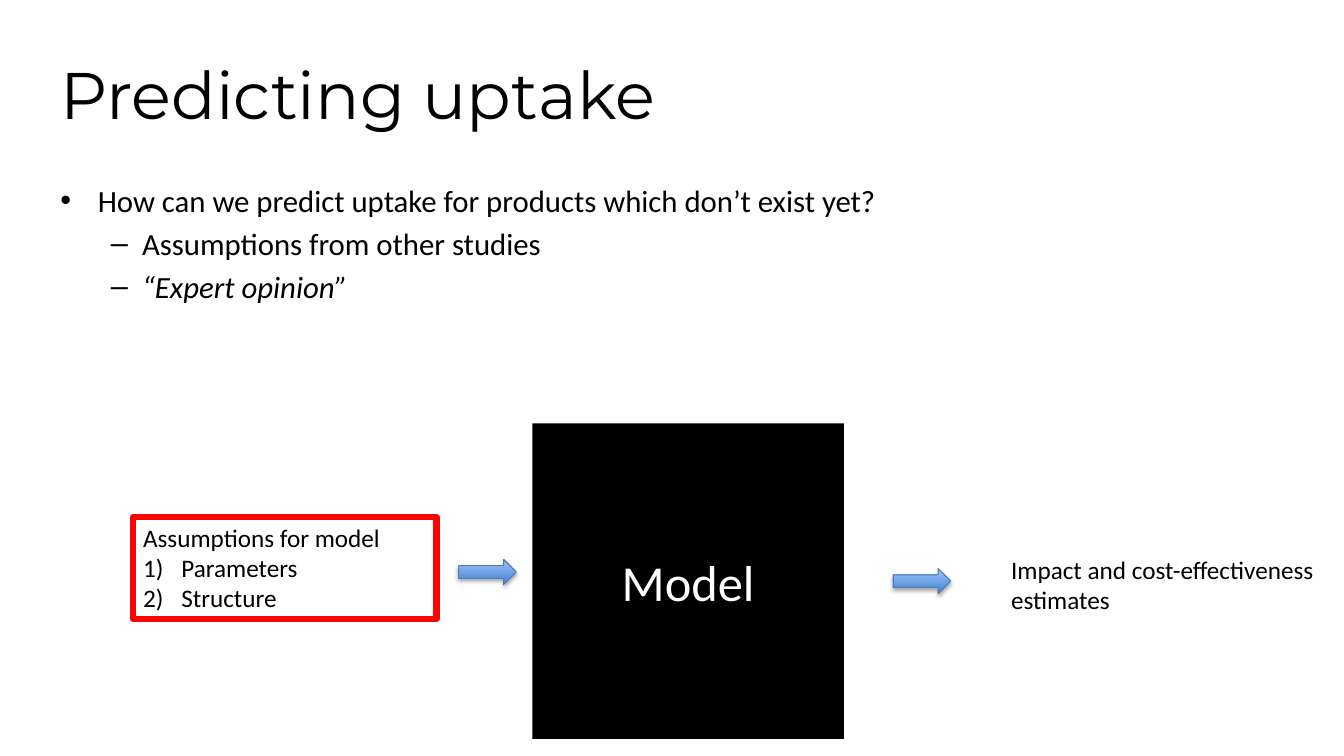
"""Build the slide on predicting uptake."""
from dataclasses import dataclass

from lxml import etree
from pptx import Presentation
from pptx.dml.color import RGBColor as Rgb
from pptx.enum.shapes import MSO_SHAPE as Shape
from pptx.enum.text import MSO_ANCHOR as Anchor, MSO_AUTO_SIZE as AutoSize, PP_ALIGN as Align
from pptx.oxml import parse_xml
from pptx.oxml.ns import nsdecls, qn
from pptx.util import Inches, Pt


@dataclass(frozen=True)
class Theme:
    """Fonts, colours and type sizes of the slide."""
    title_font: str = "Montserrat"
    body_font: str = "Calibri"
    black: Rgb = Rgb(0, 0, 0)
    white: Rgb = Rgb(255, 255, 255)
    red: Rgb = Rgb(255, 0, 0)
    arrow_dark: Rgb = Rgb(0x3F, 0x80, 0xCE)
    arrow_light: Rgb = Rgb(0xA4, 0xC4, 0xFF)
    arrow_line: Rgb = Rgb(0x4B, 0x7E, 0xBC)
    title_size: int = 47
    list_size: int = 22
    label_size: int = 18
    model_size: int = 36


THEME = Theme()
ARROW_SHADOW = (
    f'<a:effectLst {nsdecls("a")}>'
    f'<a:outerShdw blurRad="{Pt(3.1)}" dist="{Pt(1.8)}" dir="5400000" rotWithShape="0">'
    '<a:srgbClr val="000000"><a:alpha val="35000"/></a:srgbClr>'
    '</a:outerShdw></a:effectLst>'
)


def inches(*lengths):
    """Turn several lengths into inches."""
    return [Inches(length) for length in lengths]


def write(paragraph, text, size, color=THEME.black, font=THEME.body_font, italic=None):
    """Add one formatted run to a paragraph."""
    run = paragraph.add_run()
    run.text = text
    run.font.size, run.font.name, run.font.italic = Pt(size), font, italic
    run.font.color.rgb = color


def set_bullet(paragraph, tag, indent, hanging, **attributes):
    """Give a paragraph a hanging bullet or number."""
    properties = paragraph._p.get_or_add_pPr()
    properties.set("marL", str(Inches(indent)))
    properties.set("indent", str(-Inches(hanging)))
    etree.SubElement(properties, qn(tag), attributes)


def next_paragraph(frame, index):
    """Return the first paragraph of a frame or add another."""
    return frame.add_paragraph() if index else frame.paragraphs[0]


def fill_placeholder(placeholder, place, anchor):
    """Move a placeholder and return its prepared text frame."""
    placeholder.left, placeholder.top, placeholder.width, placeholder.height = inches(*place)
    frame = placeholder.text_frame
    frame.word_wrap, frame.auto_size = True, AutoSize.NONE
    frame.vertical_anchor = anchor
    return frame


def add_title(slide, text):
    """Write the slide title."""
    frame = fill_placeholder(slide.shapes.title, (0.5, 0.3, 8.85, 1.25), Anchor.MIDDLE)
    heading = frame.paragraphs[0]
    heading.alignment = Align.LEFT
    write(heading, text, THEME.title_size, font=THEME.title_font)


def add_question(slide, points):
    """Write the two-level list in the body placeholder."""
    frame = fill_placeholder(slide.placeholders[1], (0.5, 1.75, 12.17, 4.24), Anchor.TOP)
    levels = (("•", 0.37, 0.37), ("–", 0.81, 0.31))
    for index, (level, text, italic) in enumerate(points):
        point = next_paragraph(frame, index)
        point.level = level
        mark, indent, hanging = levels[level]
        set_bullet(point, "a:buChar", indent, hanging, char=mark)
        point.space_before = Pt(0.2 * THEME.list_size if index else 0)
        write(point, text, THEME.list_size, italic=italic)


def add_arrow(slide, left, top):
    """Draw a shaded arrow between two stages."""
    arrow = slide.shapes.add_shape(Shape.RIGHT_ARROW, *inches(left, top, 0.57, 0.25))
    arrow.fill.gradient()
    arrow.fill.gradient_angle = 90
    for stop, color in zip(arrow.fill.gradient_stops, (THEME.arrow_dark, THEME.arrow_light)):
        stop.color.rgb = color
    arrow.line.color.rgb, arrow.line.width = THEME.arrow_line, Pt(0.75)
    arrow._element.spPr.append(parse_xml(ARROW_SHADOW))


def add_model(slide):
    """Draw the black box that stands for the model."""
    model = slide.shapes.add_shape(Shape.RECTANGLE, *inches(5.28, 4.2, 3.09, 3.13))
    model.shadow.inherit = False
    model.fill.solid()
    model.fill.fore_color.rgb = THEME.black
    model.line.fill.background()
    model.text_frame.vertical_anchor = Anchor.MIDDLE
    label = model.text_frame.paragraphs[0]
    label.alignment = Align.CENTER
    write(label, "Model", THEME.model_size, THEME.white)


def add_label(slide, place, heading, numbered=()):
    """Add a text box with a heading and numbered items, and return it."""
    label = slide.shapes.add_textbox(*inches(*place))
    frame = label.text_frame
    frame.word_wrap = True
    for index, text in enumerate((heading, *numbered)):
        entry = next_paragraph(frame, index)
        if index:
            set_bullet(entry, "a:buAutoNum", 0.38, 0.38, type="arabicParenR")
        write(entry, text, THEME.label_size)
    return label


def outline(label):
    """Frame a label with a thick red line."""
    label.line.color.rgb, label.line.width = THEME.red, Pt(4.5)
    etree.SubElement(label.line._get_or_add_ln(), qn("a:round"))


def main():
    """Build and save the slide."""
    deck = Presentation()
    deck.slide_width, deck.slide_height = inches(13.33, 7.5)
    slide = deck.slides.add_slide(deck.slide_layouts[1])
    add_title(slide, "Predicting uptake")
    add_question(slide, (
        (0, "How can we predict uptake for products which don’t exist yet?", None),
        (1, "Assumptions from other studies", None),
        (1, "“Expert opinion”", True),
    ))
    add_arrow(slide, 4.55, 5.55)
    add_label(slide, (9.93, 5.45, 3.52, 0.71), "Impact and cost-effectiveness estimates")
    add_arrow(slide, 8.86, 5.64)
    add_model(slide)
    outline(add_label(slide, (1.32, 5.13, 3.01, 1.01), "Assumptions for model",
                      ("Parameters", "Structure")))
    deck.save("out.pptx")


if __name__ == "__main__":
    main()
